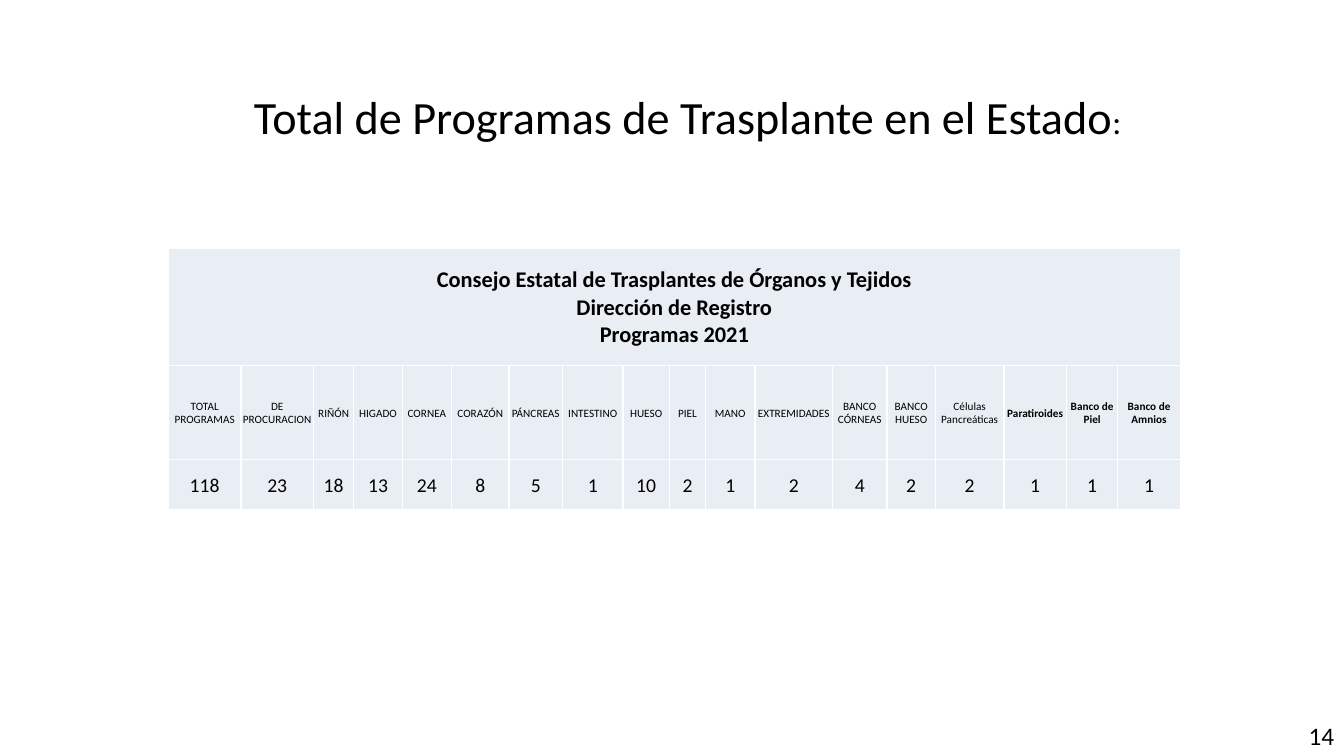
from copy import deepcopy

from lxml import etree
from pptx import Presentation
from pptx import util as u
from pptx.dml.color import RGBColor
from pptx.enum import text
from pptx.oxml.ns import qn

PX = 9144  # 100 px to the inch
FONT = "Calibri"
BLACK, WHITE, PALE = "000000", "FFFFFF", "E9EDF4"

HEADING = ("Consejo Estatal de Trasplantes de Órganos y Tejidos\n"
           "Dirección de Registro\nProgramas 2021")
# column width, programme, count
PROGRAMS = [
    (72, "TOTAL PROGRAMAS", 118),
    (72, "DE PROCURACION", 23),
    (40, "RIÑÓN", 18),
    (48, "HIGADO", 13),
    (49, "CORNEA", 24),
    (57, "CORAZÓN", 8),
    (53, "PÁNCREAS", 5),
    (60, "INTESTINO", 1),
    (46, "HUESO", 10),
    (36, "PIEL", 2),
    (49, "MANO", 1),
    (77, "EXTREMIDADES", 2),
    (54, "BANCO CÓRNEAS", 4),
    (48, "BANCO HUESO", 2),
    (68, "Células Pancreáticas", 2),
    (62, "Paratiroides", 1),
    (51, "Banco de Piel", 1),
    (62, "Banco de Amnios", 1),
]
BOLD_PROGRAMS = {"Paratiroides", "Banco de Piel", "Banco de Amnios"}
ROW_HEIGHTS = [117, 93, 50]


def px(length):
    return u.Emu(length * PX)


def color(hex_code):
    return RGBColor.from_string(hex_code)


def style_run(span, size, bold=False):
    span.font.name = FONT
    span.font.size = u.Pt(size)
    span.font.bold = bold
    span.font.color.rgb = color(BLACK)


def add_text(page, left, top, width, height, spans, align):
    """Add a one-paragraph box from (words, size) spans."""
    box = page.shapes.add_textbox(px(left), px(top), px(width), px(height))
    frame = box.text_frame
    frame.word_wrap = True
    frame.vertical_anchor = text.MSO_ANCHOR.MIDDLE
    para = frame.paragraphs[0]
    para.alignment = align
    for words, size in spans:
        span = para.add_run()
        span.text = words
        style_run(span, size)
    return para


def add_borders(cell):
    properties = cell._tc.get_or_add_tcPr()
    for side in ("a:lnL", "a:lnR", "a:lnT", "a:lnB"):
        line = etree.SubElement(properties, qn(side), w=str(u.Pt(1)))
        fill = etree.SubElement(line, qn("a:solidFill"))
        etree.SubElement(fill, qn("a:srgbClr"), val=WHITE)


def fill_cell(cell, words, size, bold=False):
    cell.margin_left = cell.margin_right = cell.margin_top = px(1)
    cell.margin_bottom = 0
    cell.vertical_anchor = text.MSO_ANCHOR.MIDDLE
    para = cell.text_frame.paragraphs[0]
    para.text = words
    para.alignment = text.PP_ALIGN.CENTER
    for span in para.runs:
        style_run(span, size, bold)
    # Line breaks take the size of the text around them
    for line_break in para._p.findall(qn("a:br")):
        line_break.append(deepcopy(para.runs[0]._r.rPr))


def add_program_table(page):
    widths = [width for width, _, _ in PROGRAMS]
    table = page.shapes.add_table(
        len(ROW_HEIGHTS), len(PROGRAMS), px(167), px(246),
        px(sum(widths)), px(sum(ROW_HEIGHTS))).table
    for row, height in zip(table.rows, ROW_HEIGHTS):
        row.height = px(height)
    for cell in table.iter_cells():
        add_borders(cell)
        cell.fill.solid()
        cell.fill.fore_color.rgb = color(PALE)

    table.cell(0, 0).merge(table.cell(0, len(PROGRAMS) - 1))
    fill_cell(table.cell(0, 0), HEADING, 16, True)
    for index, (width, program, count) in enumerate(PROGRAMS):
        table.columns[index].width = px(width)
        fill_cell(table.cell(1, index), program, 8, program in BOLD_PROGRAMS)
        fill_cell(table.cell(2, index), str(count), 14)


def main():
    deck = Presentation()
    deck.slide_width, deck.slide_height = px(1333), px(750)
    page = deck.slides.add_slide(deck.slide_layouts[6])
    add_program_table(page)
    title = add_text(page, 198, 92, 968, 56,
                     [("Total de Programas de Trasplante en el Estado", 33),
                      (":", 24)], text.PP_ALIGN.CENTER)
    title.line_spacing = 0.8
    add_text(page, 1022, 710, 311, 40, [("14", 18)], text.PP_ALIGN.RIGHT)
    deck.save("out.pptx")


if __name__ == "__main__":
    main()
